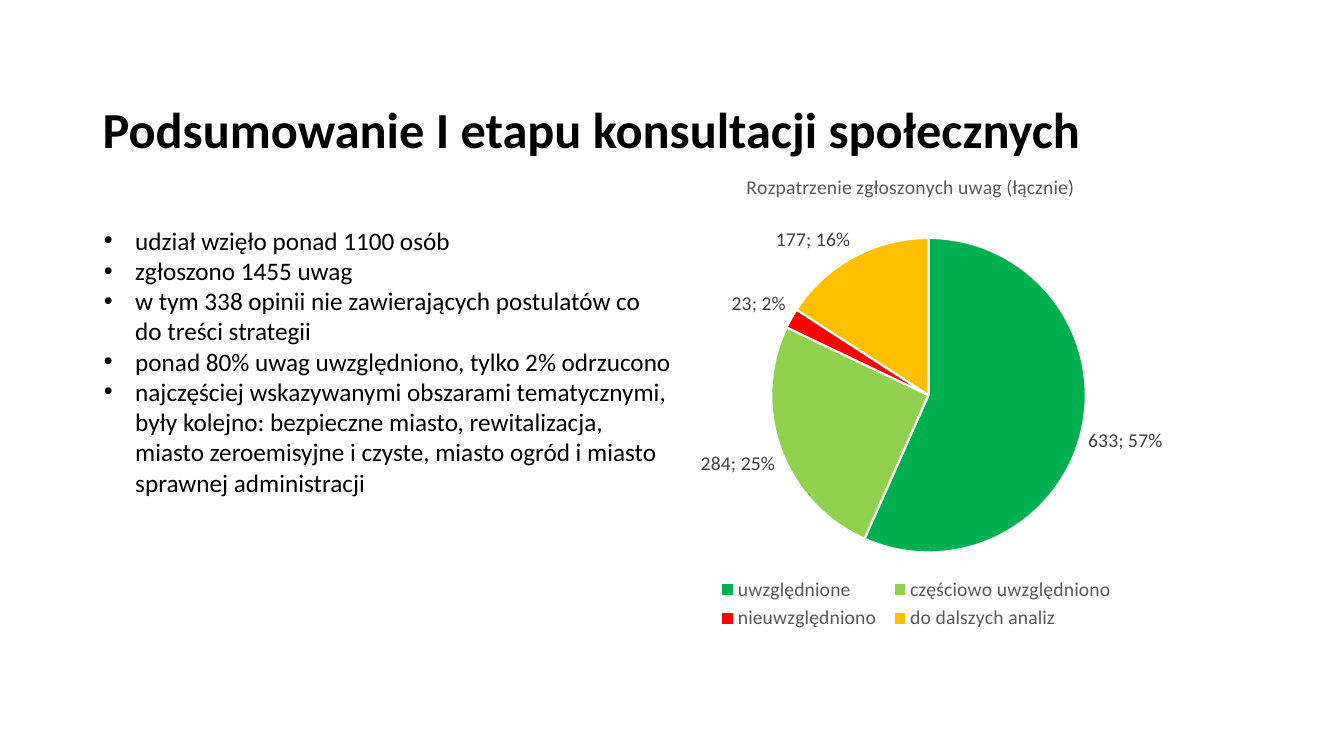
from dataclasses import dataclass
from typing import NamedTuple

from lxml import etree
from pptx import Presentation
from pptx import util as u
from pptx.chart.data import CategoryChartData
from pptx.dml.color import RGBColor
from pptx.enum import chart as ch, text
from pptx.oxml import ns

WIDE, HIGH = 13.33, 7.5


@dataclass(frozen=True)
class Theme:
    font: str = "Calibri"
    ink: str = "000000"
    gray: str = "595959"
    label: str = "404040"
    edge: str = "FFFFFF"
    head: int = 36
    body: int = 18
    small: int = 14


class Box(NamedTuple):
    x: float
    y: float
    w: float
    h: float

    def place(self) -> tuple:
        return tuple(u.Inches(part * side) for part, side in zip(self, (WIDE, HIGH) * 2))


class Slice(NamedTuple):
    name: str
    count: int
    color: str


THEME = Theme()
HEAD = Box(0.069, 0.104, 0.863, 0.141)
LIST = Box(0.07, 0.291, 0.437, 0.417)
PIE = Box(0.465, 0.205, 0.425, 0.635)
PLOT = Box(0.256, 0.173, 0.551, 0.655)
KEY = Box(0.15, 0.87, 0.72, 0.13)
INDENT = 0.31

TITLE = "Podsumowanie I etapu konsultacji społecznych"
CAPTION = "Rozpatrzenie zgłoszonych uwag (łącznie)"
POINTS = [
    "udział wzięło ponad 1100 osób",
    "zgłoszono 1455 uwag",
    "w tym 338 opinii nie zawierających postulatów co do treści strategii",
    "ponad 80% uwag uwzględniono, tylko 2% odrzucono",
    "najczęściej wskazywanymi obszarami tematycznymi, były kolejno: "
    "bezpieczne miasto, rewitalizacja, miasto zeroemisyjne i czyste, "
    "miasto ogród i miasto sprawnej administracji",
]
SLICES = [
    Slice("uwzględnione", 633, "00B050"),
    Slice("częściowo uwzględniono", 284, "92D050"),
    Slice("nieuwzględniono", 23, "FF0000"),
    Slice("do dalszych analiz", 177, "FFC000"),
]


def style(font, size: int, color: str, bold: bool = False) -> None:
    font.name = THEME.font
    font.size = u.Pt(size)
    font.bold = bold
    font.color.rgb = RGBColor.from_string(color)


def add_run(para, words: str, size: int, color: str, bold: bool = False) -> None:
    run = para.add_run()
    run.text = words
    style(run.font, size, color, bold)


def add_frame(slide, box: Box):
    frame = slide.shapes.add_textbox(*box.place()).text_frame
    frame.word_wrap = True
    return frame


def add_head(slide) -> None:
    frame = add_frame(slide, HEAD)
    frame.vertical_anchor = text.MSO_ANCHOR.MIDDLE
    para = frame.paragraphs[0]
    para.line_spacing = 0.9
    add_run(para, TITLE, THEME.head, THEME.ink, True)


def add_list(slide) -> None:
    frame = add_frame(slide, LIST)
    for i, point in enumerate(POINTS):
        para = frame.add_paragraph() if i else frame.paragraphs[0]
        props = para._p.get_or_add_pPr()
        props.set("marL", str(u.Inches(INDENT)))
        props.set("indent", str(-u.Inches(INDENT)))
        etree.SubElement(props, ns.qn("a:buFont"), typeface="Arial")
        etree.SubElement(props, ns.qn("a:buChar"), char="•")
        add_run(para, point, THEME.body, THEME.ink)


def make_layout(box: Box, inner: bool):
    layout = etree.Element(ns.qn("c:layout"))
    manual = etree.SubElement(layout, ns.qn("c:manualLayout"))
    pairs = [("layoutTarget", "inner")] if inner else []
    pairs += [("xMode", "edge"), ("yMode", "edge")]
    pairs += [(key, str(part)) for key, part in zip("xywh", box)]
    for key, value in pairs:
        etree.SubElement(manual, ns.qn(f"c:{key}"), val=value)
    return layout


def fix_layout(chart) -> None:
    root = chart.element
    for old in root.xpath("c:chart/c:plotArea/c:layout | c:chart/c:legend/c:layout"):
        old.getparent().remove(old)
    root.xpath("c:chart/c:plotArea")[0].insert(0, make_layout(PLOT, True))
    root.xpath("c:chart/c:legend/c:legendPos")[0].addnext(make_layout(KEY, False))
    mark = etree.Element(ns.qn("c:separator"))
    mark.text = "; "
    root.xpath(".//c:dLbls/c:showBubbleSize")[0].addnext(mark)


def add_pie(slide) -> None:
    data = CategoryChartData()
    data.categories = [part.name for part in SLICES]
    data.add_series("Series 1", [part.count for part in SLICES])
    chart = slide.shapes.add_chart(ch.XL_CHART_TYPE.PIE, *PIE.place(), data).chart
    style(chart.font, THEME.small, THEME.gray)
    chart.has_title = True
    add_run(chart.chart_title.text_frame.paragraphs[0], CAPTION, THEME.small, THEME.gray)
    chart.has_legend = True
    chart.legend.position = ch.XL_LEGEND_POSITION.BOTTOM
    chart.legend.include_in_layout = False
    style(chart.legend.font, THEME.small, THEME.gray)
    plot = chart.plots[0]
    plot.vary_by_categories = True
    plot.has_data_labels = True
    labels = plot.data_labels
    labels.show_value = labels.show_percentage = True
    labels.position = ch.XL_LABEL_POSITION.OUTSIDE_END
    style(labels.font, THEME.small, THEME.label)
    for i, part in enumerate(SLICES):
        look = plot.series[0].points[i].format
        look.fill.solid()
        look.fill.fore_color.rgb = RGBColor.from_string(part.color)
        look.line.color.rgb = RGBColor.from_string(THEME.edge)
        look.line.width = u.Pt(1.5)
    fix_layout(chart)


def main() -> None:
    deck = Presentation()
    deck.slide_width, deck.slide_height = u.Inches(WIDE), u.Inches(HIGH)
    slide = deck.slides.add_slide(deck.slide_layouts[6])
    add_head(slide)
    add_pie(slide)
    add_list(slide)
    deck.save("out.pptx")


if __name__ == "__main__":
    main()
